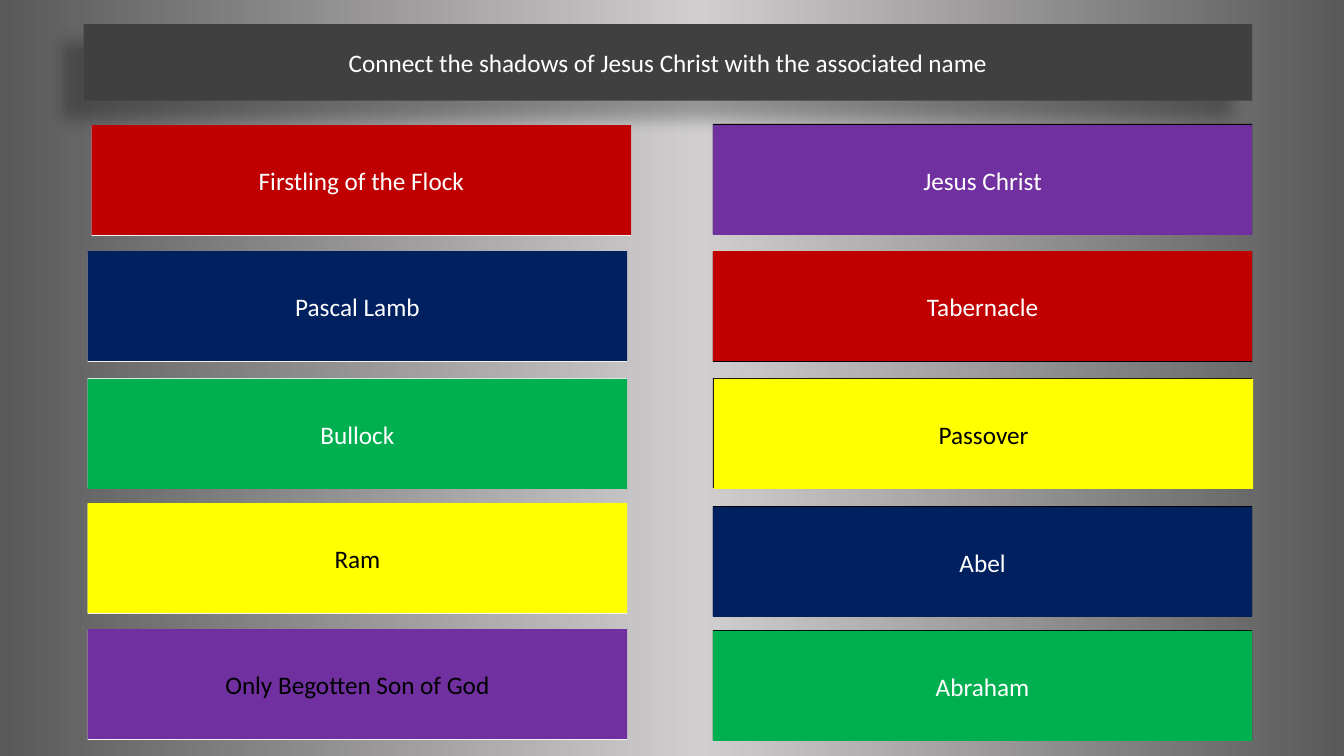
from lxml import etree
from pptx import Presentation
from pptx.dml.color import RGBColor
from pptx.enum import shapes, text
from pptx.oxml.ns import qn
from pptx.util import Inches, Pt

# Content: label, fill, ink, and nudges of card and backing from the row line
TITLE = "Connect the shadows of Jesus Christ with the associated name"
SHADOWS = [
    ("Firstling of the Flock", "red", "white", -0.01, 0),
    ("Pascal Lamb", "navy", "white", -0.01, 0),
    ("Bullock", "green", "white", 0.01, 0),
    ("Ram", "yellow", "black", -0.01, 0),
    ("Only Begotten Son of God", "purple", "black", -0.01, 0),
]
NAMES = [
    ("Jesus Christ", "purple", "white", -0.01, -0.02),
    ("Tabernacle", "red", "white", -0.01, 0),
    ("Passover", "yellow", "black", 0.01, 0),
    ("Abel", "navy", "white", 0.03, 0.02),
    ("Abraham", "green", "white", 0.01, 0),
]
# Column: left edge, backing colour, cards, and sideways nudges by row
COLUMNS = [
    (0.87, "pale", SHADOWS, {0: (0.04, 0.04)}),
    (7.07, "black", NAMES, {2: (0.01, 0)}),
]

THEME = {
    "font": "Calibri", "size": 18,
    "red": "C00000", "navy": "002060", "green": "00B050",
    "yellow": "FFFF00", "purple": "7030A0", "pale": "F2F2F2",
    "black": "000000", "white": "FFFFFF", "bar": "404040",
    "stops": [(0, "595959"), (52, "D0CECE"), (100, "595959")],
}
TOP, PITCH = 1.25, 1.25
WIDTH, HEIGHT = 5.35, 1.09


def add_box(slide, box, fill, label="", ink="white"):
    shape = slide.shapes.add_shape(
        shapes.MSO_SHAPE.RECTANGLE, *map(Inches, box))
    shape.shadow.inherit = False
    shape.fill.solid()
    shape.fill.fore_color.rgb = RGBColor.from_string(THEME[fill])
    shape.line.fill.background()
    if label:
        frame = shape.text_frame
        frame.word_wrap = True
        frame.vertical_anchor = text.MSO_ANCHOR.MIDDLE
        para = frame.paragraphs[0]
        para.alignment = text.PP_ALIGN.CENTER
        run = para.add_run()
        run.text = label
        style = {"name": THEME["font"], "size": Pt(THEME["size"])}
        for key, value in style.items():
            setattr(run.font, key, value)
        run.font.color.rgb = RGBColor.from_string(THEME[ink])
    return shape


def add_tint(parent, color):
    return etree.SubElement(parent, qn("a:srgbClr"), val=color)


def cast_shadow(shape):
    effects = shape.element.spPr.find(qn("a:effectLst"))
    shade = etree.SubElement(
        effects, qn("a:outerShdw"), blurRad=str(Pt(11.8)),
        dist=str(Pt(19.7)), dir=str(141 * 60000), algn="ctr",
        rotWithShape="0")
    tint = add_tint(shade, THEME["black"])
    etree.SubElement(tint, qn("a:alpha"), val="28000")


def paint_back(slide):
    fill = slide.background.fill
    fill.gradient()
    fill.gradient_angle = 0
    stops = next(slide.element.iter(qn("a:gsLst")))
    for old in list(stops):
        stops.remove(old)
    for place, color in THEME["stops"]:
        stop = etree.SubElement(stops, qn("a:gs"), pos=str(place * 1000))
        add_tint(stop, color)


def main():
    deck = Presentation()
    deck.slide_width, deck.slide_height = Inches(13.33), Inches(7.5)
    slide = deck.slides.add_slide(deck.slide_layouts[6])
    paint_back(slide)

    # Title bar
    cast_shadow(add_box(slide, (0.83, 0.24, 11.59, 0.76), "bar", TITLE))

    # Two columns of cards, each card on a backing that shows at its edge
    for left, back, cards, nudges in COLUMNS:
        for row, (label, fill, ink, lift, drop) in enumerate(cards):
            top = TOP + row * PITCH
            card, base = nudges.get(row, (0, 0))
            add_box(slide, (left + base, top + drop, WIDTH, HEIGHT), back)
            add_box(slide, (left + card, top + lift, WIDTH, HEIGHT),
                    fill, label, ink)

    deck.save("out.pptx")


if __name__ == "__main__":
    main()
